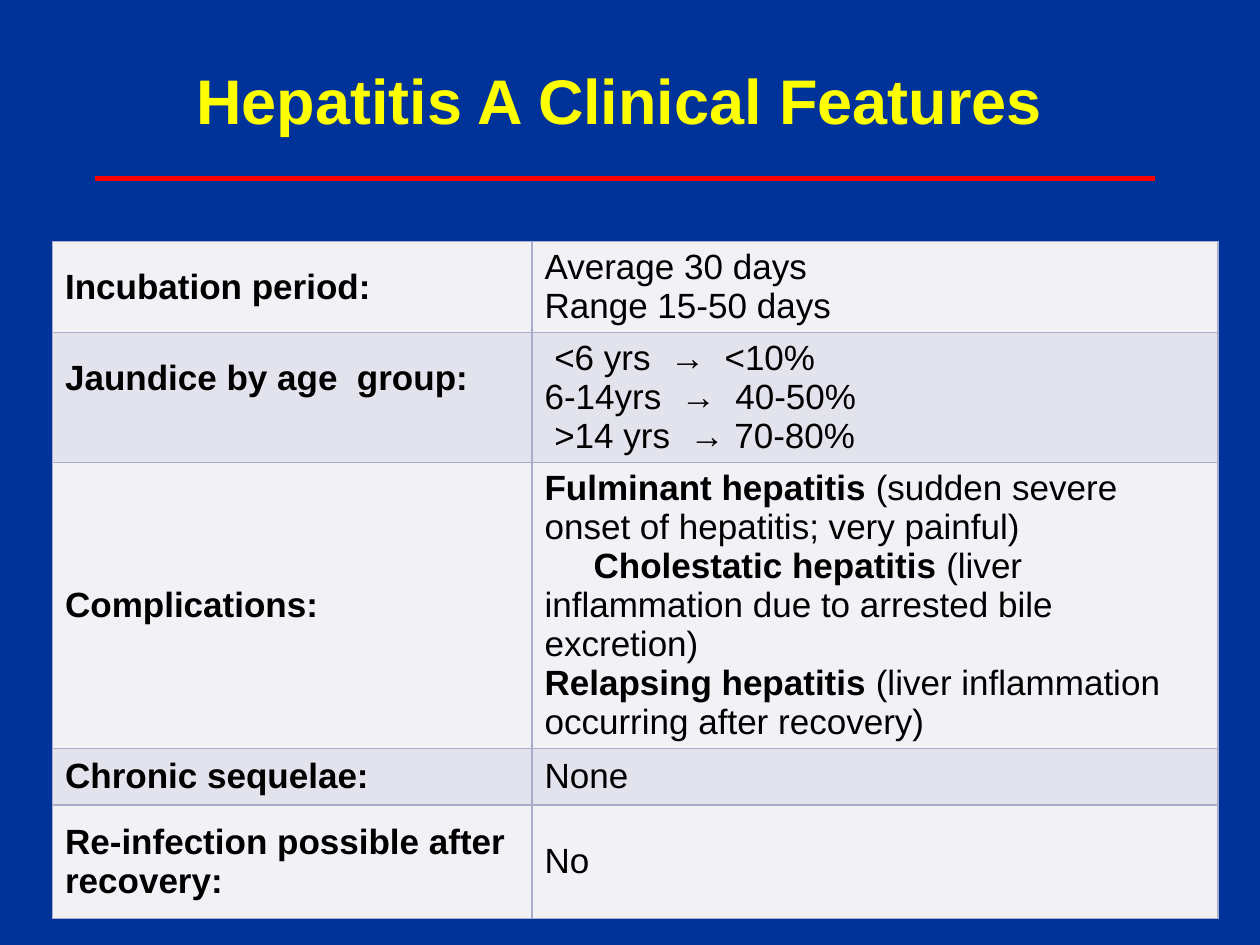
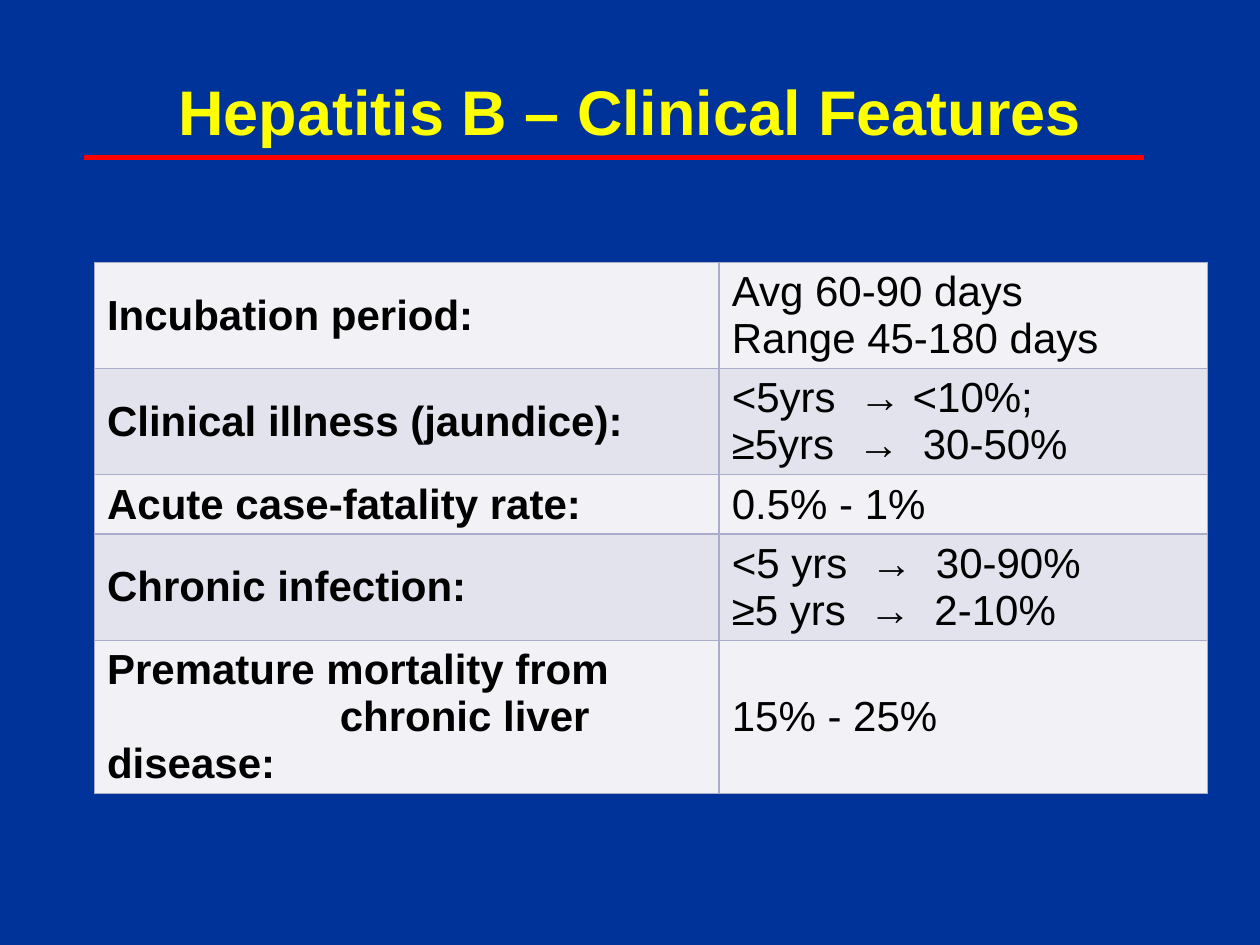
from dataclasses import dataclass

from lxml import etree
from pptx import Presentation
from pptx import util as u
from pptx.dml.color import RGBColor
from pptx.enum import shapes, text
from pptx.oxml.ns import qn


def color(hex_code):
    return RGBColor.from_string(hex_code)


@dataclass
class Para:
    """A cell paragraph with an optional bold lead and first-line indent."""
    body: str = ""
    lead: str = ""
    indent: float = 0


class Deck:
    """Holds the shared style and the slide being built."""
    FONT = "Arial"
    BACKGROUND, TITLE, RULE = "003399", "FFFF00", "FF0000"
    INK, GRID, BANDS = "000000", "AAADCA", ("F1F1F6", "E2E3EC")
    RULE_LENGTH = 606
    LINE_PITCH = {20: 22.3, 24: 26.7}

    def __init__(self):
        self.prs = Presentation()
        self.prs.slide_width, self.prs.slide_height = u.Pt(720), u.Pt(540)
        self.slide = None

    def new_slide(self):
        self.slide = self.prs.slides.add_slide(self.prs.slide_layouts[6])
        fill = self.slide.background.fill
        fill.solid()
        fill.fore_color.rgb = color(self.BACKGROUND)

    def style(self, paragraph, size, hex_code):
        paragraph.font.name = self.FONT
        paragraph.font.size = u.Pt(size)
        paragraph.font.color.rgb = color(hex_code)

    def title(self, wording, left, top, height):
        box = self.slide.shapes.add_textbox(u.Pt(left), u.Pt(top), u.Pt(612), u.Pt(height))
        frame = box.text_frame
        frame.word_wrap = True
        frame.vertical_anchor = text.MSO_ANCHOR.MIDDLE
        heading = frame.paragraphs[0]
        heading.text = wording
        heading.alignment = text.PP_ALIGN.CENTER
        heading.font.bold = True
        self.style(heading, 36, self.TITLE)

    def rule(self, left, top):
        rule = self.slide.shapes.add_connector(
            shapes.MSO_CONNECTOR.STRAIGHT,
            u.Pt(left), u.Pt(top), u.Pt(left + self.RULE_LENGTH), u.Pt(top))
        rule.line.color.rgb = color(self.RULE)
        rule.line.width = u.Pt(3)
        etree.SubElement(rule._element.spPr, qn("a:effectLst"))

    def borders(self, cell):
        props = cell._tc.get_or_add_tcPr()
        for position, side in enumerate(("lnL", "lnR", "lnT", "lnB")):
            edge = etree.Element(qn(f"a:{side}"), w=str(u.Pt(1)))
            solid = etree.SubElement(edge, qn("a:solidFill"))
            etree.SubElement(solid, qn("a:srgbClr"), val=self.GRID)
            props.insert(position, edge)

    def cell(self, cell, paras, size, band):
        cell.vertical_anchor = text.MSO_ANCHOR.MIDDLE
        cell.fill.solid()
        cell.fill.fore_color.rgb = color(band)
        self.borders(cell)
        frame = cell.text_frame
        for number, para in enumerate(paras):
            paragraph = frame.add_paragraph() if number else frame.paragraphs[0]
            self.style(paragraph, size, self.INK)
            paragraph.line_spacing = u.Pt(self.LINE_PITCH[size])
            for wording, bold in ((para.lead, True), (para.body, False)):
                if wording:
                    run = paragraph.add_run()
                    run.text = wording
                    run.font.bold = bold
            if para.indent:
                paragraph._p.get_or_add_pPr().set("indent", str(u.Pt(para.indent)))

    def features(self, left, top, widths, heights, size, rows):
        frame = self.slide.shapes.add_table(
            len(rows), 2, u.Pt(left), u.Pt(top), u.Pt(sum(widths)), u.Pt(sum(heights)))
        table = frame.table
        table.first_row = table.horz_banding = False
        for column, width in zip(table.columns, widths):
            column.width = u.Pt(width)
        for number, (height, row) in enumerate(zip(heights, rows)):
            table.rows[number].height = u.Pt(height)
            for place, paras in enumerate(row):
                self.cell(table.cell(number, place), paras, size, self.BANDS[number % 2])
        return table


def feature(label, *findings):
    return [Para(lead=label)], [Para(finding) for finding in findings]


def hepatitis_a(deck):
    deck.new_slide()
    deck.title("Hepatitis A Clinical Features", 48, 24, 66)
    deck.rule(54, 102)
    complications = [
        Para(" (sudden severe onset of hepatitis; very painful)", "Fulminant hepatitis"),
        Para(" (liver inflammation due to arrested bile excretion)",
             "Cholestatic hepatitis", 28),
        Para(" (liver inflammation occurring after recovery)", "Relapsing hepatitis"),
    ]
    table = deck.features(30, 138, (274, 392), (52, 74.3, 163.5, 32.2, 65), 20, [
        feature("Incubation period:", "Average 30 days", "Range 15-50 days"),
        feature("Jaundice by age  group:",
                " <6 yrs  →  <10%", "6-14yrs  →  40-50%", " >14 yrs  → 70-80%"),
        ([Para(lead="Complications:")], complications),
        feature("Chronic sequelae:", "None"),
        feature("Re-infection possible after recovery:", "No"),
    ])
    table.cell(1, 0).margin_bottom = u.Pt(26)


def hepatitis_b(deck):
    deck.new_slide()
    deck.title("Hepatitis B – Clinical Features", 54, 18, 90)
    deck.rule(48, 90)
    mortality = [Para(lead="Premature mortality from"),
                 Para(lead="chronic liver disease:", indent=133)]
    deck.features(54, 150, (357, 279), (60.6, 60.6, 34, 60.6, 87.4), 24, [
        feature("Incubation period:", "Avg 60-90 days", "Range 45-180 days"),
        feature("Clinical illness (jaundice):", "<5yrs  → <10%;", "≥5yrs  →  30-50%"),
        feature("Acute case-fatality rate:", "0.5% - 1%"),
        feature("Chronic infection:", "<5 yrs  →  30-90%", "≥5 yrs  →  2-10%"),
        (mortality, [Para("15% - 25%")]),
    ])


def main():
    deck = Deck()
    hepatitis_a(deck)
    hepatitis_b(deck)
    deck.prs.save("out.pptx")


if __name__ == "__main__":
    main()
